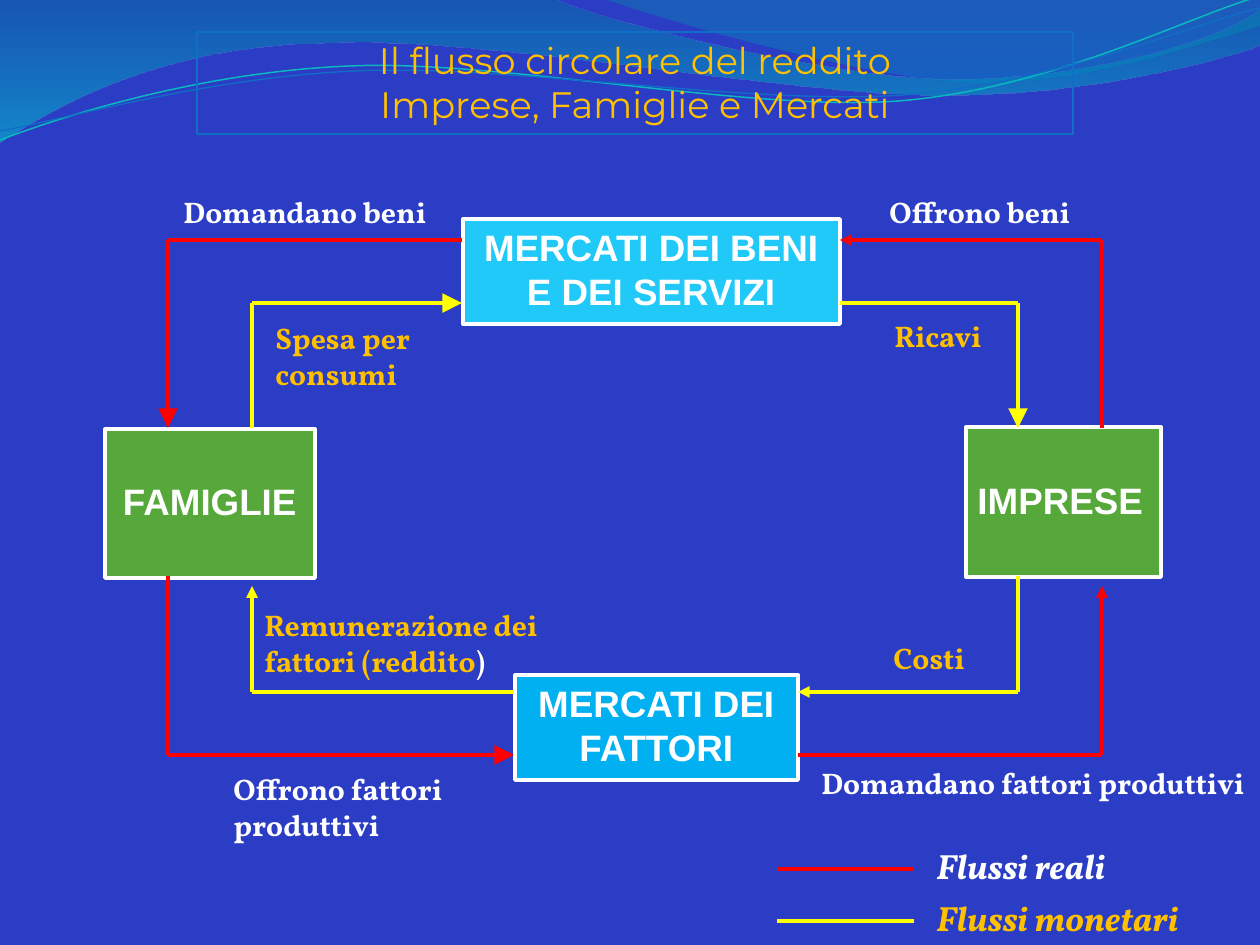
"""Build the circular flow of income slide: firms, households and markets."""
from lxml import etree
from pptx import Presentation, util as u
from pptx.dml.color import RGBColor
from pptx.enum import shapes, text
from pptx.oxml import parse_xml
from pptx.oxml.ns import qn

COLORS = {
    "ground": "2B3DC4", "white": "FFFFFF", "gold": "FFC000", "frame": "0F6FC6",
    "aqua": "0AB8BF", "sky": "20C9F8", "azure": "00B0F0", "green": "55A839",
    "real": "FF0000", "money": "FFFF00",
}
NS = "http://schemas.openxmlformats.org/drawingml/2006/main"

TITLE = ["Il flusso circolare del reddito", "Imprese, Famiglie e Mercati"]
TITLE_PLACE = (197, 32, 876, 102)

BOXES = [
    ("MERCATI DEI BENI E DEI SERVIZI", "sky", (463, 219, 377, 105), True, 13),
    ("FAMIGLIE", "green", (105, 429, 210, 149), True, 13),
    ("MERCATI DEI FATTORI", "azure", (515, 675, 283, 105), True, 13),
    ("IMPRESE", "green", (966, 427, 195, 150), False, 19),
]

LABELS = [
    ([("Spesa per consumi", "gold")], (263, 314, 188, 84)),
    ([("Remunerazione dei fattori (reddito", "gold"), (")", "white")], (252, 601, 305, 84)),
    ([("Costi", "gold")], (881, 634, 100, 48)),
    ([("Ricavi", "gold")], (882, 312, 113, 48)),
    ([("Domandano fattori produttivi", "white")], (809, 759, 451, 48)),
    ([("Offrono fattori produttivi", "white")], (221, 765, 294, 84)),
    ([("Domandano beni", "white")], (171, 188, 272, 48)),
    ([("Offrono beni", "white")], (877, 188, 209, 48)),
]

FLOWS = [
    ("real", "lg", [(462, 240), (168, 240), (168, 428)]),
    ("real", "med", [(1102, 428), (1102, 240), (840, 240)]),
    ("real", "lg", [(168, 576), (168, 755), (514, 755)]),
    ("real", "med", [(798, 755), (1102, 755), (1102, 586)]),
    ("money", "lg", [(252, 428), (252, 303), (462, 303)]),
    ("money", "lg", [(840, 303), (1018, 303), (1018, 428)]),
    ("money", "med", [(1018, 576), (1018, 692), (798, 692)]),
    ("money", "med", [(514, 692), (252, 692), (252, 586)]),
]

LEGEND = [("Flussi reali", "white", "real", 869), ("Flussi monetari", "gold", "money", 921)]

WAVES = [
    ([(0, 0), (554, -1), (600, 21, 837, 79, 955, 79), (1075, 79, 1207, 47, 1260, 11),
      (1261, 45), (1239, 55, 1096, 96, 940, 95), (784, 95, 481, 35, 324, 43),
      (163, 45, 58, 105, -1, 142), (0, 0)], [(0, "0074A1", 45), (100, "00C6CF", 55)]),
    ([(604, -1), (641, 14, 859, 78, 969, 82), (1079, 87, 1211, 40, 1260, 26),
      (1260, 0), (604, -1)], [(0, "00A1A9", 30), (80, "008BBF", 45)]),
]
STRANDS = [
    ([(0, 140), (60, 117, 199, 72, 349, 66), (498, 59, 747, 112, 898, 101),
      (1050, 89, 1182, 19, 1257, -3)], "aqua", 0.85),
    ([(0, 131), (59, 121, 207, 77, 357, 71), (508, 64, 752, 106, 903, 95),
      (1053, 84, 1186, 26, 1260, 8)], "frame", 0.75),
]


def px(*lengths):
    return [u.Emu(round(length * 914400 / 126)) for length in lengths]


def color(name):
    return RGBColor.from_string(COLORS[name])


def set_line(shape, name, width):
    shape.line.color.rgb = color(name)
    shape.line.width = u.Pt(width)


def set_font(font, name, size, hue, bold=False, italic=False):
    font.name, font.size, font.bold, font.italic = name, u.Pt(size), bold, italic
    font.color.rgb = color(hue)


def add_curve(slide, curve, close):
    points = [px(*part[i:i + 2]) for part in curve for i in range(0, len(part), 2)]
    builder = slide.shapes.build_freeform(*points[0])
    builder.add_line_segments(points[1:], close=close)
    shape = builder.convert_to_shape()
    shape.shadow.inherit = False
    segments = iter(list(shape._element.iter(qn("a:lnTo"))))
    for part in curve[1:]:
        first = next(segments)
        if len(part) == 6:
            first.tag = qn("a:cubicBezTo")
            for extra in (next(segments), next(segments)):
                first.append(extra[0])
                extra.getparent().remove(extra)
    return shape


def add_wave(slide, curve, stops):
    wave = add_curve(slide, curve, True)
    wave.line.fill.background()
    stop_xml = "".join(
        f'<a:gs pos="{pos * 1000}"><a:srgbClr val="{hue}"><a:alpha val="{alpha * 1000}"/>'
        f'</a:srgbClr></a:gs>' for pos, hue, alpha in stops)
    gradient = parse_xml(f'<a:gradFill xmlns:a="{NS}"><a:gsLst>{stop_xml}</a:gsLst>'
                         '<a:lin ang="5400000" scaled="0"/></a:gradFill>')
    wave._element.spPr.find(qn("a:custGeom")).addnext(gradient)


def add_strand(slide, curve, hue, width):
    strand = add_curve(slide, curve, False)
    strand.fill.background()
    set_line(strand, hue, width)


def add_title(slide):
    title = slide.shapes.title
    slide.shapes._spTree.append(title._element)
    title.left, title.top, title.width, title.height = px(*TITLE_PLACE)
    set_line(title, "frame", 1)
    frame = title.text_frame
    frame.text = "\n".join(TITLE)
    frame.auto_size = text.MSO_AUTO_SIZE.NONE
    frame.vertical_anchor = text.MSO_ANCHOR.MIDDLE
    frame.margin_bottom = px(8)[0]
    for para in frame.paragraphs:
        para.alignment = text.PP_ALIGN.CENTER
        set_font(para.font, "Montserrat", 21, "gold")


def add_box(slide, words, fill, place, wrap, margin_right):
    box = slide.shapes.add_shape(shapes.MSO_SHAPE.RECTANGLE, *px(*place))
    box.shadow.inherit = False
    box.fill.solid()
    box.fill.fore_color.rgb = color(fill)
    set_line(box, "white", 2.25)
    frame = box.text_frame
    frame.word_wrap = wrap
    frame.vertical_anchor = text.MSO_ANCHOR.MIDDLE
    frame.margin_right, frame.margin_bottom = px(margin_right, 11)
    para = frame.paragraphs[0]
    para.text = words
    para.alignment = text.PP_ALIGN.CENTER
    set_font(para.font, "Arial", 21, "white", True)


def add_label(slide, spans, place, size=17, italic=False):
    frame = slide.shapes.add_textbox(*px(*place)).text_frame
    frame.word_wrap = place[3] > 60
    para = frame.paragraphs[0]
    for words, hue in spans:
        span = para.add_run()
        span.text = words
        set_font(span.font, "Vollkorn", size, hue, True, italic)


def add_line(slide, start, end, hue, arrow=None):
    line = slide.shapes.add_connector(shapes.MSO_CONNECTOR.STRAIGHT, *px(*start, *end))
    set_line(line, hue, 2.25)
    if arrow:
        etree.SubElement(line.line._get_or_add_ln(), qn("a:tailEnd"),
                         type="triangle", w=arrow, len=arrow)
    etree.SubElement(line._element.spPr, qn("a:effectLst"))


def main():
    deck = Presentation()
    deck.slide_width, deck.slide_height = px(1260, 945)
    slide = deck.slides.add_slide(deck.slide_layouts[5])
    slide.background.fill.solid()
    slide.background.fill.fore_color.rgb = color("ground")
    for wave in WAVES:
        add_wave(slide, *wave)
    for strand in STRANDS:
        add_strand(slide, *strand)
    add_title(slide)
    for box in BOXES:
        add_box(slide, *box)
    for label in LABELS:
        add_label(slide, *label)
    for hue, arrow, (start, corner, end) in FLOWS:
        add_line(slide, start, corner, hue)
        add_line(slide, corner, end, hue, arrow)
    for words, word_hue, line_hue, y in LEGEND:
        add_label(slide, [(words, word_hue)], (924, y - 31, 284, 54), 20, True)
        add_line(slide, (777, y), (914, y), line_hue)
    deck.save("out.pptx")


if __name__ == "__main__":
    main()
